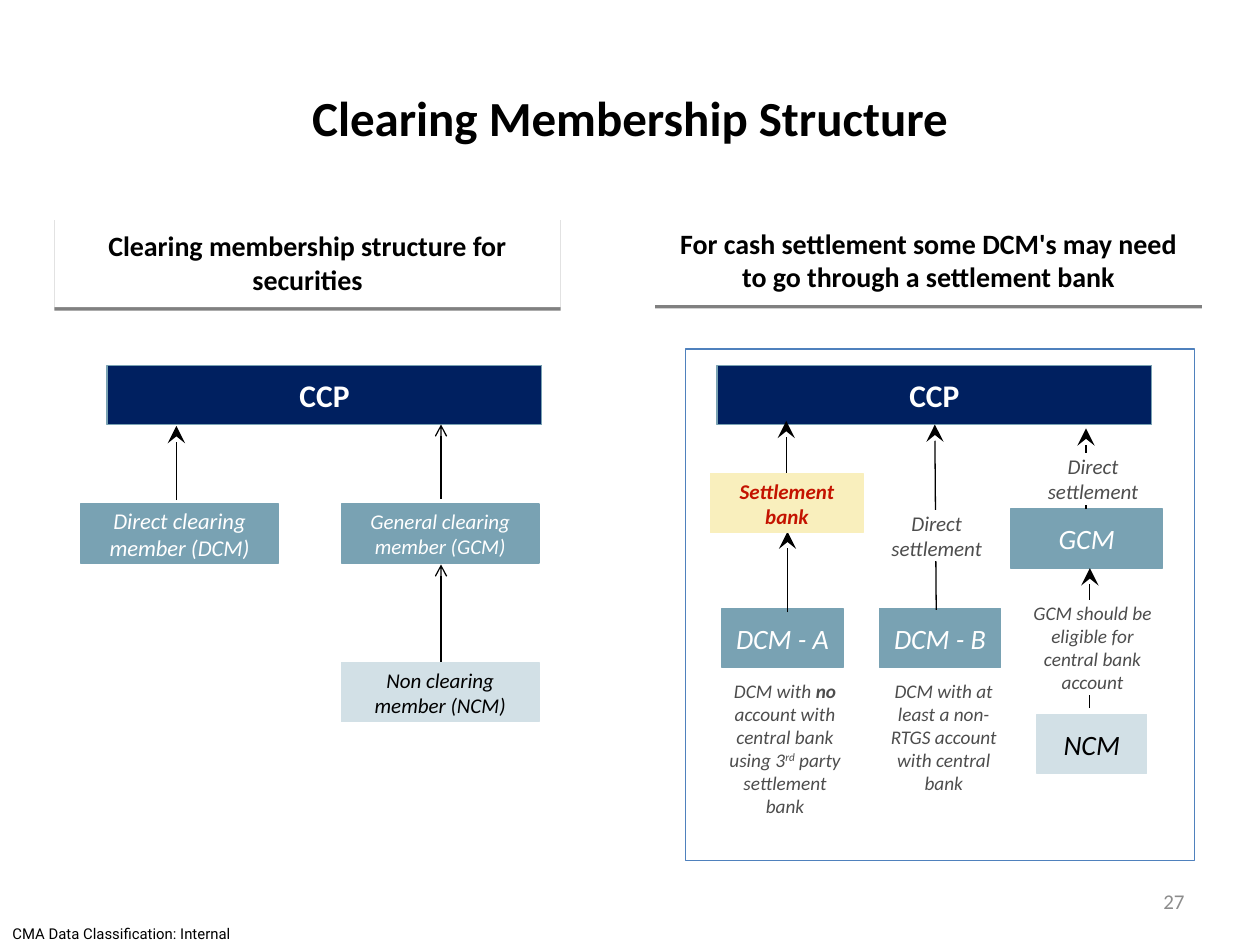
from lxml import etree
from pptx import Presentation
from pptx.dml.color import RGBColor
from pptx.enum import shapes, text
from pptx.oxml import ns
from pptx.util import Pt

C = {"black": "000000", "white": "FFFFFF", "navy": "002060", "teal": "79A2B3",
     "pale": "D2E0E6", "cream": "F9EFBD", "red": "C41300", "body": "4D4D4D",
     "blue": "4F81BD", "grey": "808080", "number": "8C8C8C"}
ALIGN, ANCHOR = text.PP_ALIGN, text.MSO_ANCHOR
ROW_H = 33.8


def rgb(name):
    return RGBColor.from_string(C[name])


def add_child(parent, tag, **attrs):
    return etree.SubElement(parent, ns.qn(tag), attrs)


def write(s, runs, size=12, color="black", font="Calibri", bold=False, italic=False,
          align=ALIGN.CENTER, anchor=ANCHOR.MIDDLE, inset=(7.2, 6.5)):
    tf = s.text_frame
    tf.word_wrap = True
    tf.vertical_anchor = anchor
    tf.margin_left = tf.margin_right = Pt(inset[0])
    tf.margin_top = tf.margin_bottom = Pt(inset[1])
    p = tf.paragraphs[0]
    p.alignment = align
    for words, style in [(runs, "")] if isinstance(runs, str) else runs:
        r = p.add_run()
        r.text = words
        r.font.name, r.font.size = font, Pt(size)
        r.font.bold, r.font.italic = bold or style == "bold", italic
        r.font.color.rgb = rgb(color)
        if style == "super":
            r._r.get_or_add_rPr().set("baseline", "30000")


def add_text(slide, x, y, w, h, runs, **fmt):
    s = slide.shapes.add_textbox(Pt(x), Pt(y), Pt(w), Pt(h))
    write(s, runs, **fmt)


def add_rect(slide, x, y, w, h, fill=None, line=None):
    s = slide.shapes.add_shape(shapes.MSO_SHAPE.RECTANGLE, Pt(x), Pt(y), Pt(w), Pt(h))
    s.shadow.inherit = False
    if fill:
        s.fill.solid()
        s.fill.fore_color.rgb = rgb(fill)
    else:
        s.fill.background()
    if line:
        s.line.color.rgb = rgb(line)
        s.line.width = Pt(0.75)
    else:
        s.line.fill.background()
    return s


def add_box(slide, x, y, w, words, fill="teal", line=None, color="white", italic=True, **fmt):
    s = add_rect(slide, x, y, w, ROW_H, fill, line or fill)
    write(s, words, color=color, italic=italic, **fmt)


def add_ccp(slide, x, y):
    add_box(slide, x, y, 248.4, "CCP", "navy", "teal", size=18, bold=True, italic=False)


def add_label(slide, x, y, w, h, words, size):
    s = add_rect(slide, x, y, w, h, "white", "white")
    write(s, words, size=size, color="body", italic=True, anchor=ANCHOR.TOP, inset=(0, 0))


def add_arrow(slide, x1, y1, x2, y2, head="stealth", size="lg"):
    s = slide.shapes.add_connector(shapes.MSO_CONNECTOR.STRAIGHT, Pt(x1), Pt(y1), Pt(x2), Pt(y2))
    s.line.color.rgb = rgb("black")
    s.line.width = Pt(0.75)
    add_child(s.line._get_or_add_ln(), "a:tailEnd", type=head, w=size, len=size)
    add_child(s._element.spPr, "a:effectLst")


def add_header(slide, x, y, w, h, words):
    s = add_rect(slide, x, y, w, h, "white")
    effects = s._element.spPr.find(ns.qn("a:effectLst"))
    shadow = add_child(effects, "a:outerShdw", blurRad="0", dist=str(Pt(2)),
                       dir="5400000", algn="ctr", rotWithShape="0")
    add_child(shadow, "a:srgbClr", val=C["grey"])
    write(s, words, size=16, bold=True, anchor=ANCHOR.BOTTOM, inset=(6.5, 6.5))


def add_securities(slide, x, y):
    add_ccp(slide, x + 15.1, y)
    add_box(slide, x, y + 79.2, 113, "Direct clearing member (DCM)", size=12.9)
    add_box(slide, x + 149, y + 79.2, 113, "General clearing member (GCM)")
    add_arrow(slide, x + 54.7, y + 77, x + 54.7, y + 34.6)
    for start, end in [(76.3, 33.8), (173.5, 113.8)]:
        add_arrow(slide, x + 205.9, y + start, x + 205.9, y + end, "arrow", "med")
    add_box(slide, x + 149, y + 169.9, 113, "Non clearing member (NCM)", "pale", color="black")


def add_settlement(slide, x, y, w, h):
    add_ccp(slide, x + 18, y + 9.4)
    for dx, dy, bw, words, fill, color in [
            (20.9, 148.4, 69.1, "DCM - A", "teal", "white"),
            (110.9, 148.4, 69.1, "DCM - B", "teal", "white"),
            (185.7, 91.5, 87.1, "GCM", "teal", "white"),
            (200.9, 208.8, 62.6, "NCM", "pale", "black")]:
        add_box(slide, x + dx, y + dy, bw, words, fill, color=color, size=16)
    for dx, th, runs in [
            (21.6, 80, [("DCM with ", ""), ("no ", "bold"),
                        ("account with central bank using 3", ""), ("rd", "super"),
                        (" party settlement bank", "")]),
            (112.3, 67, "DCM with at least a non-RTGS account with central bank")]:
        add_text(slide, x + dx, y + 188.7, 70.6, th, runs, size=11, color="body",
                 italic=True, anchor=ANCHOR.TOP, inset=(0, 0))
    for x1, y1, x2, y2 in [(231.1, 205.2, 231.1, 125.3), (143.3, 149.1, 142.5, 43.2),
                           (58.3, 150.5, 58.3, 104.4), (57.6, 74.2, 57.6, 41.1),
                           (228.9, 91.5, 228.9, 45.4)]:
        add_arrow(slide, x + x1, y + y1, x + x2, y + y2)
    add_box(slide, x + 14.4, y + 71.3, 87.1, "Settlement bank", "cream", color="red", bold=True)
    add_rect(slide, x, y, w, h, line="blue")
    add_label(slide, x + 197.3, y + 144, 70.6, 53.3,
              "GCM should be eligible for central bank account", 11)
    for dx, dy in [(113.7, 92.2), (203, 59.8)]:
        add_label(slide, x + dx, y + dy, 59.8, 28.8, "Direct settlement", 12)


def add_frame_text(slide, w, h):
    add_text(slide, 0, h - 15.1, w, 17.3, "CMA Data Classification: Internal", size=8.5,
             font="Roboto", align=ALIGN.LEFT, anchor=ANCHOR.TOP, inset=(7.2, 3.6))
    add_text(slide, w - 203.8, h - 39.6, 167.8, 28.8, "27", color="number",
             align=ALIGN.RIGHT, inset=(7.2, 3.6))
    add_text(slide, 36, 21.6, w - 72, 90, "Clearing Membership Structure", size=28,
             bold=True, inset=(7.2, 3.6))


def main():
    prs = Presentation()
    prs.slide_width, prs.slide_height = Pt(720), Pt(540)
    slide = prs.slides.add_slide(prs.slide_layouts[6])
    add_frame_text(slide, 720, 540)
    add_securities(slide, 46.1, 208.8)
    add_settlement(slide, 391.7, 199.4, 290.9, 292.3)
    add_header(slide, 31, 123.8, 289.4, 51.8, "Clearing membership structure for securities")
    add_header(slide, 374.4, 122.4, 312.5, 51.8,
               "For cash settlement some DCM's may need to go through a settlement bank")
    prs.save("out.pptx")


if __name__ == "__main__":
    main()
